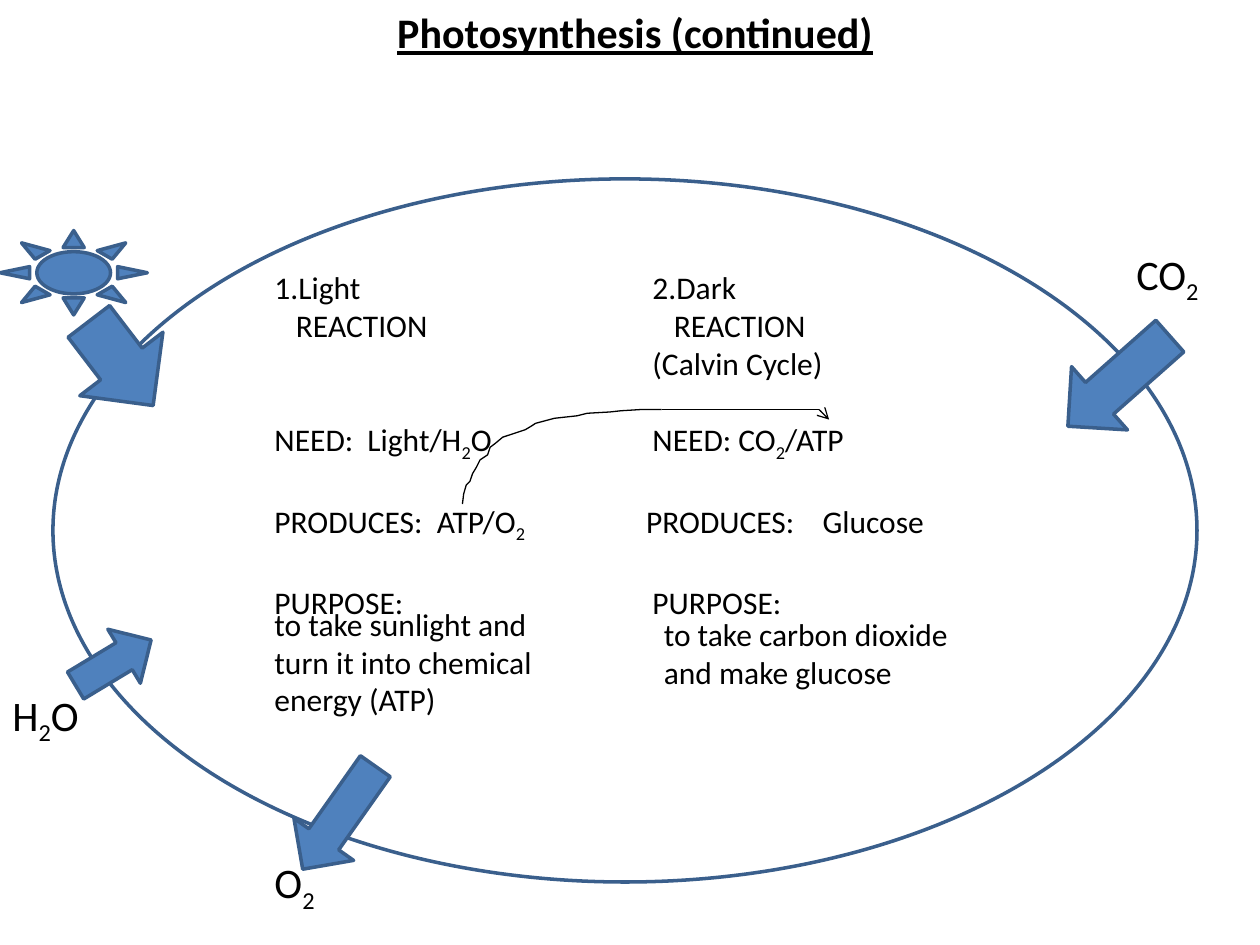
from lxml import etree
from pptx import Presentation
from pptx.dml.color import RGBColor
from pptx.enum import shapes, text
from pptx.oxml import ns
from pptx.util import Inches, Pt

HUES = {"ink": "000000", "paper": "FFFFFF", "blue": "4F81BD", "edge": "3A5F8C"}
KIND = shapes.MSO_SHAPE
ROWS = [
    ("1.Light\t2.Dark", [3], 0),
    ("\tREACTION\tREACTION", [0.17, 3.17], 0),
    ("\t(Calvin Cycle)", [3], 0),
    ("NEED:  Light/H_2O\tNEED: CO_2/ATP", [3], 22),
    ("PRODUCES:  ATP/O_2\tPRODUCES:\tGlucose", [2.95, 4.35], 22),
    ("PURPOSE:\tPURPOSE:", [3], 22),
]
ARROWS = [
    (0.54, 2.47, 0.84, 0.83, 52.6),
    (0.55, 5.01, 0.7, 0.5, 328.9),
    (8.34, 2.69, 1.08, 0.67, 138.5),
    (2.19, 6.2, 1, 0.58, 125.2),
]
LABELS = [("H_2O", 0, 5.42), ("CO_2", 8.92, 1.92), ("O_2", 2.08, 6.75)]
NOTES = [
    ("to take sunlight and turn it into chemical energy (ATP)", 2.08, 4.75, 1.01),
    ("to take carbon dioxide and make glucose", 5.17, 4.83, 0.71),
]
CURVE = [
    (3.67, 4), (3.68, 3.92), (3.7, 3.85), (3.73, 3.82), (3.75, 3.76),
    (3.78, 3.71), (3.81, 3.65), (3.87, 3.61), (3.89, 3.55), (3.93, 3.52),
    (3.99, 3.47), (4.11, 3.43), (4.17, 3.41), (4.22, 3.38), (4.25, 3.36),
    (4.4, 3.32), (4.49, 3.31), (4.58, 3.3), (4.66, 3.28), (4.84, 3.27),
    (4.93, 3.26), (5.09, 3.25), (5.25, 3.25),
]


def tint(name):
    return RGBColor.from_string(HUES[name])


def stroke(item, hue, width):
    item.line.color.rgb = tint(hue)
    item.line.width = Pt(width)


def add_run(para, words, size, low=False):
    run = para.add_run()
    run.text = words
    run.font.name = "Calibri"
    run.font.size = Pt(size)
    run.font.color.rgb = tint("ink")
    if low:
        run._r.get_or_add_rPr().set("baseline", "-25000")
    return run


def write(para, words, size):
    first, *rest = words.split("_")
    add_run(para, first, size)
    for part in rest:
        add_run(para, part[0], size, low=True)
        if part[1:]:
            add_run(para, part[1:], size)


def set_tabs(para, stops):
    tabs = etree.SubElement(para._p.get_or_add_pPr(), ns.qn("a:tabLst"))
    for stop in stops:
        etree.SubElement(tabs, ns.qn("a:tab"), pos=str(Inches(stop)), algn="l")


def add_box(slide, *place):
    frame = slide.shapes.add_textbox(*map(Inches, place)).text_frame
    frame.word_wrap = True
    frame.auto_size = text.MSO_AUTO_SIZE.SHAPE_TO_FIT_TEXT
    return frame


def add_text(slide, words, size, *place):
    write(add_box(slide, *place).paragraphs[0], words, size)


def add_title(slide, words):
    title = slide.shapes.title
    title.left, title.top, title.width, title.height = map(
        Inches, (0.08, 0, 9.92, 0.51))
    frame = title.text_frame
    frame.vertical_anchor = text.MSO_ANCHOR.TOP
    frame.auto_size = text.MSO_AUTO_SIZE.SHAPE_TO_FIT_TEXT
    para = frame.paragraphs[0]
    para.alignment = text.PP_ALIGN.CENTER
    run = add_run(para, words, 24)
    run.font.bold = run.font.underline = True


def add_shape(slide, kind, place, fill="blue", turn=0):
    item = slide.shapes.add_shape(kind, *map(Inches, place))
    item.shadow.inherit = False
    item.fill.solid()
    item.fill.fore_color.rgb = tint(fill)
    stroke(item, "edge", 2)
    item.rotation = turn


def add_table_text(slide):
    frame = add_box(slide, 2.08, 2.08, 6.92, 3.13)
    for i, (words, stops, gap) in enumerate(ROWS):
        para = frame.add_paragraph() if i else frame.paragraphs[0]
        para.space_before = Pt(gap)
        set_tabs(para, stops)
        write(para, words, 18)


def add_curve(slide):
    start, *rest = [(Inches(x), Inches(y)) for x, y in CURVE]
    pen = slide.shapes.build_freeform(*start)
    pen.add_line_segments(rest, close=False)
    item = pen.convert_to_shape()
    item.shadow.inherit = False
    item.fill.background()
    stroke(item, "ink", 0.75)


def add_line(slide, *ends, tip=False):
    item = slide.shapes.add_connector(
        shapes.MSO_CONNECTOR.STRAIGHT, *map(Inches, ends))
    stroke(item, "ink", 0.75)
    if tip:
        etree.SubElement(item.line._get_or_add_ln(), ns.qn("a:tailEnd"), type="arrow")
    etree.SubElement(item._element.spPr, ns.qn("a:effectLst"))


def main():
    deck = Presentation()
    deck.slide_width, deck.slide_height = Inches(10), Inches(7.5)
    slide = deck.slides.add_slide(deck.slide_layouts[5])
    add_title(slide, "Photosynthesis (continued)")
    add_shape(slide, KIND.OVAL, (0.42, 1.42, 9.08, 5.58), fill="paper")
    add_table_text(slide)
    add_shape(slide, KIND.SUN, (0, 1.83, 1.17, 0.67))
    for *place, turn in ARROWS:
        add_shape(slide, KIND.RIGHT_ARROW, place, turn=turn)
    for words, x, y in LABELS:
        add_text(slide, words, 24, x, y, 0.75, 0.51)
    add_curve(slide)
    add_line(slide, 5.25, 3.25, 6.5, 3.25)
    add_line(slide, 6.5, 3.25, 6.58, 3.33, tip=True)
    for words, x, y, high in NOTES:
        add_text(slide, words, 18, x, y, 2.58, high)
    deck.save("out.pptx")


if __name__ == "__main__":
    main()
